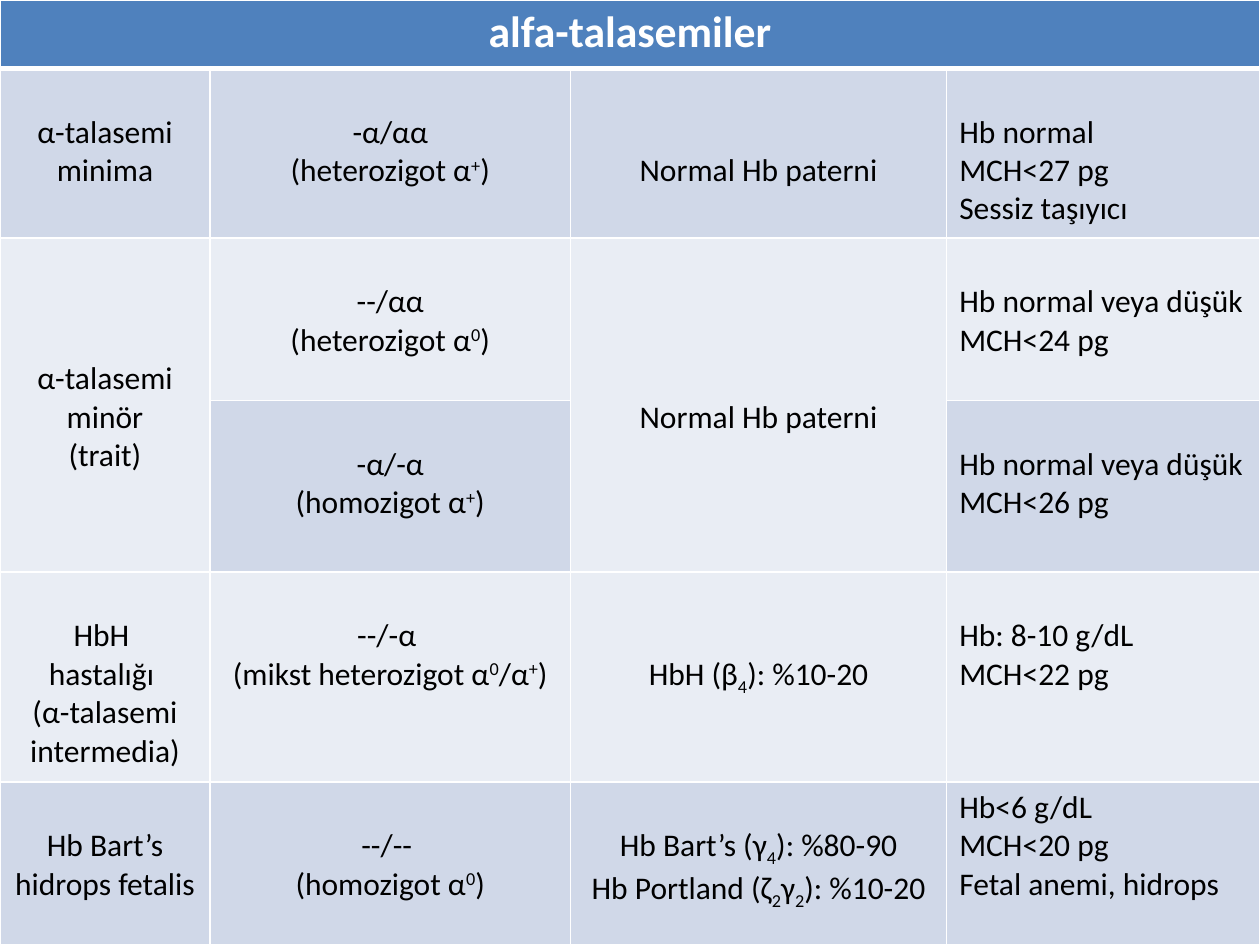
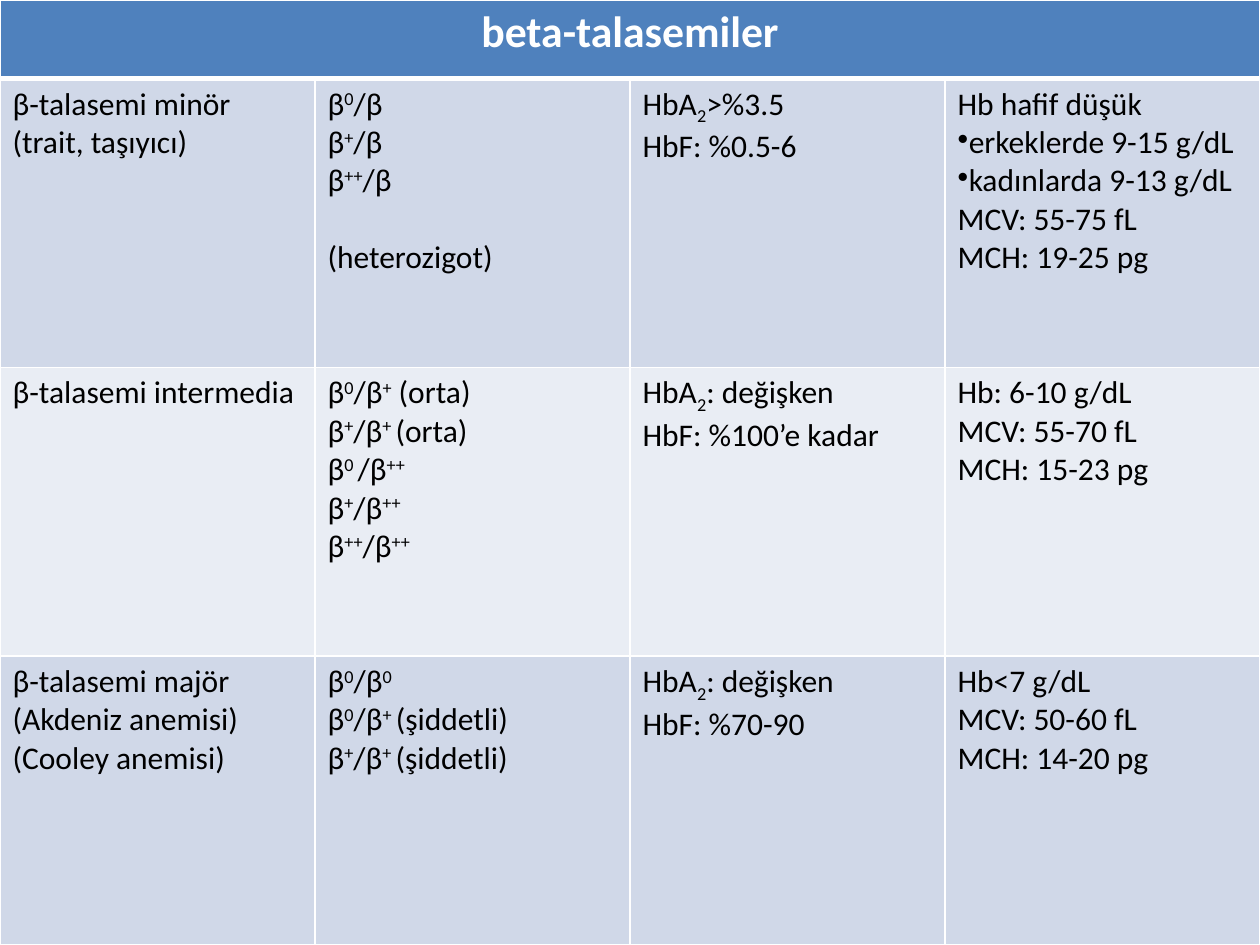
import pptx
import pptx.util
import pptx.dml.color
import pptx.enum.text
import pptx.oxml.ns
import lxml.etree

Pt = pptx.util.Pt
RGB = pptx.dml.color.RGBColor.from_string
ALIGN = pptx.enum.text.PP_ALIGN
qn = pptx.oxml.ns.qn

COLORS = {"head": "4F81BD", "dark": "D0D8E8", "light": "E9EDF4",
          "white": "FFFFFF", "black": "000000"}
FONT = "Calibri"
LINE = 22     # height of one 18 pt line
INSET = 3.6   # top margin of a cell


def write(cell, text, size=18, color="black", bold=False, align=ALIGN.LEFT):
    """Each line is a paragraph; leading breaks lower the text, an empty line
    leaves a gap, |^x| is raised, |_x| is lowered, a leading dot is a bullet."""
    body = text.lstrip("\n")
    cell.margin_top = Pt(INSET + LINE * (len(text) - len(body)))
    frame = cell.text_frame
    para, gap = frame.paragraphs[0], 0
    for num, line in enumerate(body.split("\n")):
        if not line:
            gap += LINE
            continue
        if num:
            para = frame.add_paragraph()
        para.alignment = align
        if gap:
            para.space_before, gap = Pt(gap), 0
        if line.startswith("•"):
            line = line[1:]
            props = para._p.get_or_add_pPr()
            lxml.etree.SubElement(props, qn("a:buChar")).set("char", "•")
        for part, piece in enumerate(line.split("|")):
            if not piece:
                continue
            run = para.add_run()
            font = run.font
            font.name, font.size, font.bold = FONT, Pt(size), bold
            font.color.rgb = RGB(COLORS[color])
            if part % 2:
                shift = "30000" if piece[0] == "^" else "-25000"
                run._r.get_or_add_rPr().set("baseline", shift)
                piece = piece[1:]
            run.text = piece


def border(cell, side, width):
    line = lxml.etree.SubElement(cell._tc.get_or_add_tcPr(), qn("a:ln" + side))
    line.set("w", str(Pt(width)))
    fill = lxml.etree.SubElement(line, qn("a:solidFill"))
    lxml.etree.SubElement(fill, qn("a:srgbClr")).set("val", COLORS["white"])


# Content of the two tables; None is a cell covered by the one above
alpha = {
    "title": "alfa-talasemiler",
    "cols": [120, 206, 215, 179],
    "rows": [39, 97, 93, 98, 120, 93],
    "mid": 3,  # number of leading columns that are centred
    "cells": [
        ["\nα-talasemi minima",
         "\n-α/αα\n(heterozigot α|^+|)",
         "\n\nNormal Hb paterni",
         "\nHb normal\nMCH<27 pg\nSessiz taşıyıcı"],
        ["\n\n\nα-talasemi minör\n(trait)",
         "\n--/αα\n(heterozigot α|^0|)",
         "\n\n\n\nNormal Hb paterni",
         "\nHb normal veya düşük\nMCH<24 pg"],
        [None,
         "\n-α/-α\n(homozigot α|^+|)",
         None,
         "\nHb normal veya düşük\nMCH<26 pg"],
        ["\nHbH \nhastalığı \n(α-talasemi intermedia)",
         "\n--/-α \n(mikst heterozigot α|^0|/α|^+|)",
         "\n\nHbH (β|_4|): %10-20",
         "\nHb: 8-10 g/dL\nMCH<22 pg"],
        ["\nHb Bart’s hidrops fetalis",
         "\n--/-- \n(homozigot α|^0|)",
         "\nHb Bart’s (γ|_4|): %80-90\nHb Portland (ζ|_2|γ|_2|): %10-20",
         "Hb<6 g/dL\nMCH<20 pg\nFetal anemi, hidrops"],
    ],
}
beta = {
    "title": "beta-talasemiler",
    "cols": [180] * 4,
    "rows": [45] + [165] * 3,
    "mid": 0,
    "cells": [
        ["β-talasemi minör (trait, taşıyıcı)",
         "β|^0|/β\nβ|^+|/β\nβ|^++|/β\n\n(heterozigot)",
         "HbA|_2|>%3.5\nHbF: %0.5-6",
         "Hb hafif düşük\n•erkeklerde 9-15 g/dL\n•kadınlarda 9-13 g/dL\n"
         "MCV: 55-75 fL\nMCH: 19-25 pg"],
        ["β-talasemi intermedia",
         "β|^0|/β|^+| (orta)\nβ|^+|/β|^+ |(orta)\nβ|^0 |/β|^++|\n"
         "β|^+|/β|^++|\nβ|^++|/β|^++|",
         "HbA|_2|: değişken\nHbF: %100’e kadar",
         "Hb: 6-10 g/dL\nMCV: 55-70 fL\nMCH: 15-23 pg"],
        ["β-talasemi majör (Akdeniz anemisi)\n(Cooley anemisi)",
         "β|^0|/β|^0|\nβ|^0|/β|^+ |(şiddetli)\nβ|^+|/β|^+ |(şiddetli)",
         "HbA|_2|: değişken\nHbF: %70-90",
         "Hb<7 g/dL\nMCV: 50-60 fL\nMCH: 14-20 pg"],
    ],
}

deck = pptx.Presentation()
deck.slide_width, deck.slide_height = Pt(720), Pt(540)

for data in (alpha, beta):
    slide = deck.slides.add_slide(deck.slide_layouts[6])
    cols, rows = data["cols"], data["rows"]
    table = slide.shapes.add_table(len(rows), len(cols), 0, 0,
                                   Pt(sum(cols)), Pt(sum(rows))).table
    table.first_row = table.horz_banding = False
    for col, width in zip(table.columns, cols):
        col.width = Pt(width)
    for row, height in zip(table.rows, rows):
        row.height = Pt(height)

    # Borders and banded fills, with a thick rule under the title row
    for r in range(len(rows)):
        for c in range(len(cols)):
            cell = table.cell(r, c)
            for side in "LRTB":
                thick = (r, side) in ((0, "B"), (1, "T"))
                border(cell, side, 3 if thick else 1)
            tint = "head" if r == 0 else "dark" if r % 2 else "light"
            cell.fill.solid()
            cell.fill.fore_color.rgb = RGB(COLORS[tint])

    # Title row
    table.cell(0, 0).merge(table.cell(0, len(cols) - 1))
    write(table.cell(0, 0), data["title"], size=25, color="white", bold=True,
          align=ALIGN.CENTER)

    # Body rows
    for r, line in enumerate(data["cells"], 1):
        for c, text in enumerate(line):
            if text is None:
                table.cell(r - 1, c).merge(table.cell(r, c))
            else:
                write(table.cell(r, c), text,
                      align=ALIGN.CENTER if c < data["mid"] else ALIGN.LEFT)

deck.save("out.pptx")
